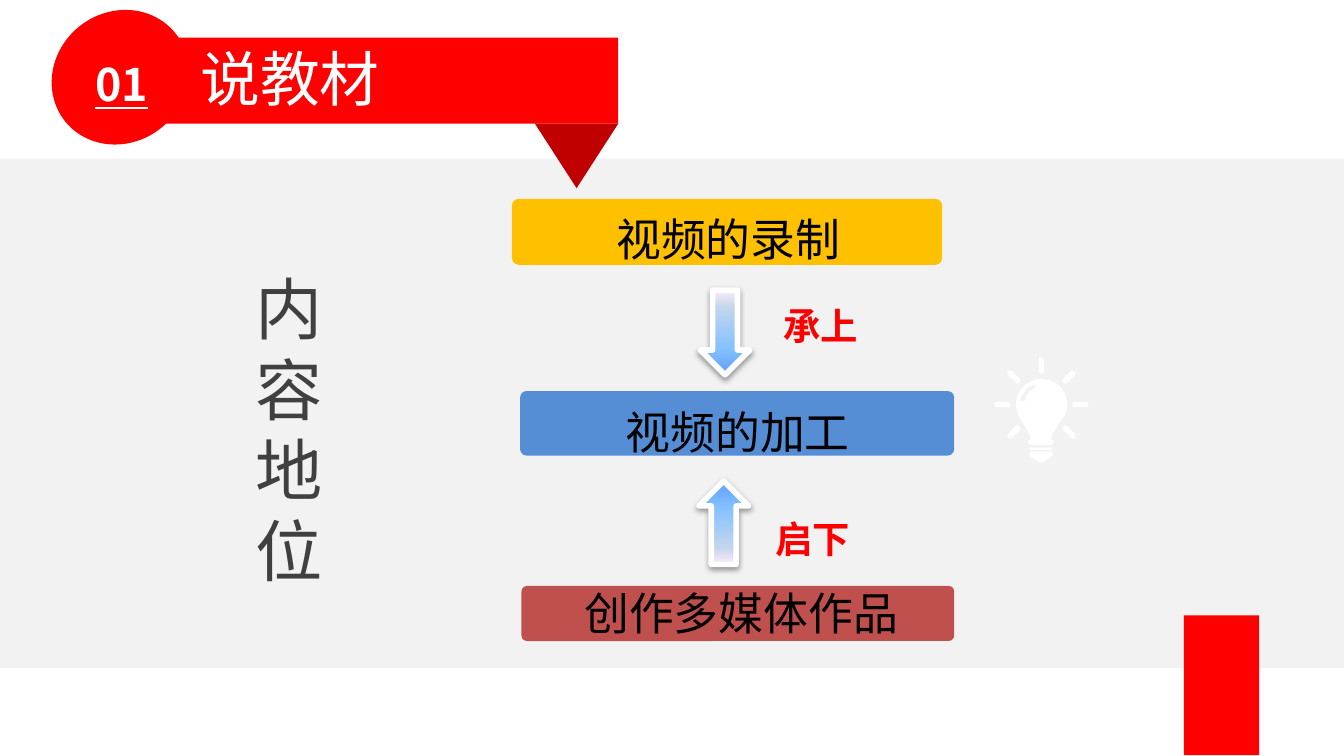
from math import cos, pi, radians, sin

from lxml.etree import SubElement
from pptx import Presentation
from pptx.dml.color import RGBColor
from pptx.enum.shapes import MSO_SHAPE as Shape
from pptx.enum.text import MSO_ANCHOR as Anchor, MSO_AUTO_SIZE as AutoSize, PP_ALIGN as Align
from pptx.oxml import parse_xml
from pptx.oxml.ns import nsdecls, qn
from pptx.util import Inches, Pt

rgb = RGBColor.from_string
SANS = "Noto Sans CJK SC"
RED, WHITE, BLACK = "FF0000", "FFFFFF", "000000"

presentation = Presentation()
presentation.slide_width = Inches(10)
presentation.slide_height = Inches(10 * 9 / 16)
slide = presentation.slides.add_slide(presentation.slide_layouts[5])
shapes = slide.shapes


def add_block(kind, box, color, flip=None, rotation=0):
    shape = shapes.add_shape(kind, *map(Inches, box))
    shape.shadow.inherit = False
    shape.fill.solid()
    shape.fill.fore_color.rgb = rgb(color)
    shape.line.fill.background()
    shape.rotation = rotation
    if flip:
        shape._element.spPr.find(qn("a:xfrm")).set(flip, "1")
    return shape


def write_text(shape, box, lines, color, align=Align.LEFT, wrap=True, **style):
    shape.left, shape.top, shape.width, shape.height = map(Inches, box)
    frame = shape.text_frame
    frame.word_wrap = wrap
    frame.auto_size = AutoSize.SHAPE_TO_FIT_TEXT
    frame.vertical_anchor = Anchor.TOP
    frame.text = "\n".join(lines)
    for paragraph in frame.paragraphs:
        paragraph.alignment = align
        font = paragraph.runs[0].font
        font.color.rgb = rgb(color)
        for name, value in style.items():
            setattr(font, name, value)
        if style["name"] == SANS:
            SubElement(font._element, qn("a:ea")).set("typeface", SANS)


add_block(Shape.RECTANGLE, (0, 1.18, 10, 3.79), "F2F2F2")
add_block(Shape.RECTANGLE, (8.81, 4.58, 0.56, 1.04), RED)
write_text(shapes.add_textbox(0, 0, 0, 0), (1.8, 1.94, 0.88, 2.52), "内容地位", "404040",
           name=SANS, size=Pt(36))

topics = [
    ("视频的加工", (3.87, 2.91, 3.23, 0.48), "558ED5", (4.06, 2.96, 2.36, 0.5), Align.RIGHT),
    ("视频的录制", (3.81, 1.48, 3.2, 0.49), "FFC000", (3.63, 1.53, 2.72, 0.5), Align.RIGHT),
    ("创作多媒体作品", (3.88, 4.36, 3.22, 0.41), "C0504D", (4.25, 4.31, 2.64, 0.5), Align.LEFT),
]
for label, bar_box, color, label_box, align in topics:
    bar = add_block(Shape.ROUNDED_RECTANGLE, bar_box, color)
    bar.adjustments[0] = 0.1
    write_text(shapes.add_textbox(0, 0, 0, 0), label_box, [label], BLACK, align,
               name="Calibri", size=Pt(24))

for label, left, top in [("承上", 5.73, 2.21), ("启下", 5.67, 3.79)]:
    write_text(shapes.add_textbox(0, 0, 0, 0), (left, top, 0.89, 0.44), [label], RED,
               name=SANS, size=Pt(20), bold=True)

stops = "".join(
    f'<a:gs pos="{position * 1000}"><a:srgbClr val="{color}"/></a:gs>'
    for position, color in [(0, "5E9EFF"), (33, "85C2FF"), (80, "C4D6EB"), (100, "FFEBFA")])
gradient = (f'<a:gradFill {nsdecls("a")} rotWithShape="1"><a:gsLst>{stops}</a:gsLst>'
            '<a:lin ang="16200000" scaled="0"/></a:gradFill>')
shadow = (f'<a:outerShdw {nsdecls("a")} blurRad="{Pt(3.1)}" dist="{Pt(1.6)}" dir="5400000" '
          f'rotWithShape="0"><a:srgbClr val="{BLACK}"><a:alpha val="38000"/></a:srgbClr></a:outerShdw>')
for box, flip in [((5.2, 3.58, 0.37, 0.62), "flipV"), ((5.21, 2.16, 0.37, 0.63), None)]:
    arrow = add_block(Shape.DOWN_ARROW, box, WHITE, flip)
    arrow.line.color.rgb = rgb(WHITE)
    arrow.line.width = Pt(3)
    properties = arrow._element.spPr
    properties.replace(properties.find(qn("a:solidFill")), parse_xml(gradient))
    properties.find(qn("a:effectLst")).append(parse_xml(shadow))

center_x, center_y = 7.75, 3.01
contours = []
capsules = [(7.67, 3.29, 7.82, 3.29, 0.02), (7.67, 3.34, 7.82, 3.34, 0.01)]
for angle in range(-225, 46, 45):
    across, down = cos(radians(angle)), sin(radians(angle))
    capsules.append((center_x + 0.25 * across, center_y + 0.25 * down,
                     center_x + 0.33 * across, center_y + 0.33 * down, 0.02))
for start_x, start_y, end_x, end_y, radius in capsules:
    length = ((end_x - start_x) ** 2 + (end_y - start_y) ** 2) ** 0.5
    across, down = (end_x - start_x) / length * radius, (end_y - start_y) / length * radius
    contours.append([
        (x + sign * (across * cos(turn) - down * sin(turn)),
         y + sign * (down * cos(turn) + across * sin(turn)))
        for x, y, sign in [(end_x, end_y, 1), (start_x, start_y, -1)]
        for turn in [step * pi / 8 for step in range(-4, 5)]])

arcs = {
    "bulb": [(0.19, angle) for angle in range(155, 386, 10)],
    "shine": [(0.16, angle) for angle in range(190, 251, 10)]
    + [(0.13, angle) for angle in range(250, 189, -10)],
}
for name, points in arcs.items():
    contour = [(center_x + radius * cos(radians(angle)), center_y + radius * sin(radians(angle)))
               for radius, angle in points]
    if name == "bulb":
        contour += [(7.86, 3.18), (7.83, 3.23), (7.82, 3.27), (7.67, 3.27), (7.66, 3.23), (7.63, 3.18)]
    contours.append(contour)
contours.append([(7.67, 3.36), (7.82, 3.36), (7.84, 3.38), (7.82, 3.4), (7.79, 3.42),
                 (7.76, 3.44), (7.73, 3.44), (7.7, 3.42), (7.67, 3.4), (7.66, 3.38)])

outlines = [[(Inches(x), Inches(y)) for x, y in contour] for contour in contours]
builder = shapes.build_freeform(*outlines[0][0], scale=1.0)
builder.add_line_segments(outlines[0][1:], close=True)
for outline in outlines[1:]:
    builder.move_to(*outline[0])
    builder.add_line_segments(outline[1:], close=True)
light_bulb = builder.convert_to_shape()
light_bulb.shadow.inherit = False
light_bulb.fill.solid()
light_bulb.fill.fore_color.rgb = rgb(WHITE)
light_bulb.line.fill.background()

add_block(Shape.OVAL_CALLOUT, (0.37, 0.09, 1.05, 0.97), RED, "flipH", 321.4)
write_text(shapes.add_textbox(0, 0, 0, 0), (0.61, 0.37, 0.62, 0.5), ["01"], WHITE, wrap=False,
           name=SANS, size=Pt(24), bold=True, underline=True)
add_block(Shape.RECTANGLE, (1.19, 0.28, 3.41, 0.64), RED)
add_block(Shape.ISOSCELES_TRIANGLE, (3.98, 0.92, 0.62, 0.48), "C00000", rotation=180)
title = shapes.title
write_text(title, (1.39, 0.26, 1.55, 0.64), ["说教材"], WHITE, wrap=False, name=SANS, size=Pt(32))
shapes._spTree.append(title._element)

presentation.save("out.pptx")
